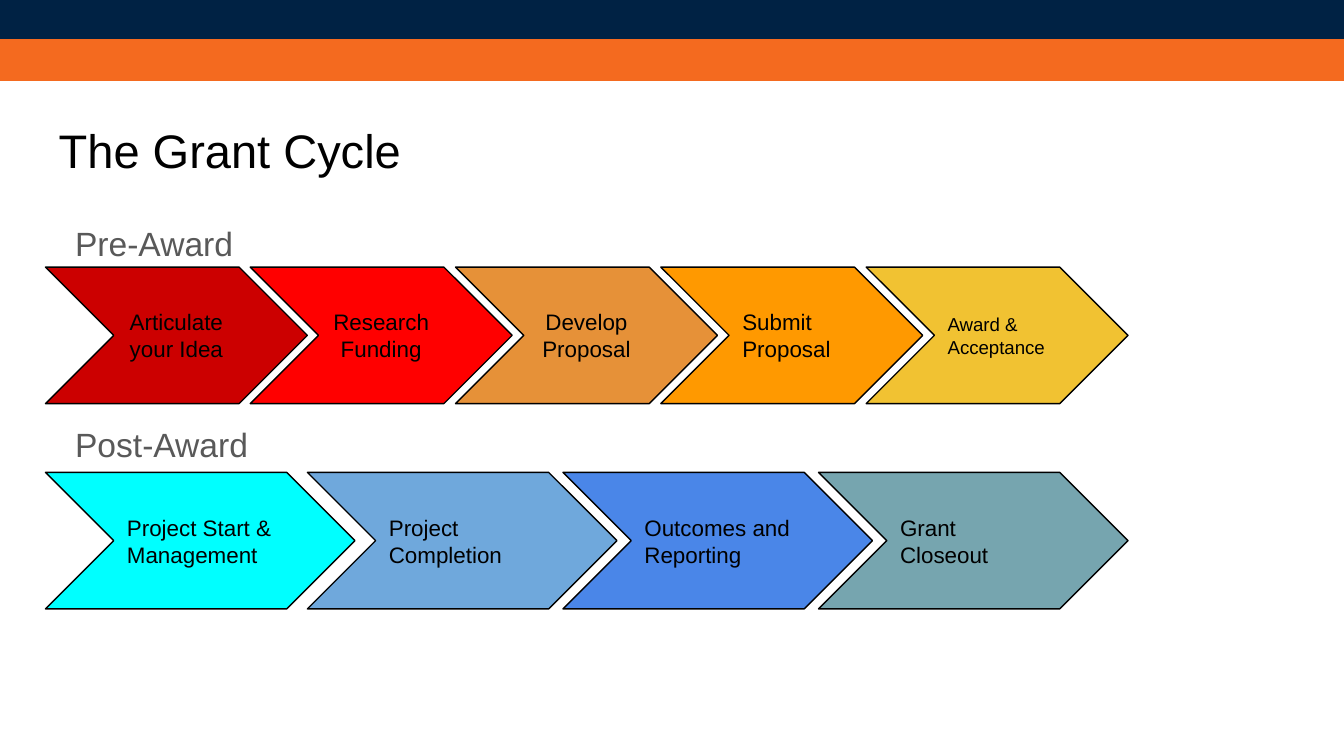
"""Build the grant cycle slide with its pre-award and post-award chevrons."""
from pptx import Presentation
from pptx.dml.color import RGBColor
from pptx.enum import shapes, text
from pptx.util import Cm, Pt

FONT = "Arial"
BLACK = RGBColor(0, 0, 0)
GRAY = RGBColor(0x59, 0x59, 0x59)
NAVY = RGBColor(0x00, 0x22, 0x44)
ORANGE = RGBColor(0xF4, 0x6A, 0x1F)
DARK_RED = RGBColor(0xCC, 0x00, 0x00)
RED = RGBColor(0xFF, 0x00, 0x00)
COPPER = RGBColor(0xE6, 0x91, 0x38)
AMBER = RGBColor(0xFF, 0x99, 0x00)
GOLD = RGBColor(0xF1, 0xC2, 0x32)
CYAN = RGBColor(0x00, 0xFF, 0xFF)
SKY = RGBColor(0x6F, 0xA8, 0xDC)
BLUE = RGBColor(0x4A, 0x86, 0xE8)
TEAL = RGBColor(0x76, 0xA5, 0xAF)
LEFT, CENTER = text.PP_ALIGN.LEFT, text.PP_ALIGN.CENTER

TITLE = "The Grant Cycle"
BANDS = [NAVY, ORANGE]
PHASES = [
    {
        "heading": "Pre-Award", "heading_top": 3.96, "top": 5.05,
        "width": 4.95, "second_left": 4.73, "pitch": 3.88,
        "steps": [
            ("Articulate your Idea", DARK_RED, CENTER, 12),
            ("Research Funding", RED, CENTER, 12),
            ("Develop Proposal", COPPER, CENTER, 12),
            ("Submit Proposal", AMBER, LEFT, 12),
            ("Award & Acceptance", GOLD, LEFT, 10),
        ],
    },
    {
        "heading": "Post-Award", "heading_top": 7.77, "top": 8.93,
        "width": 5.85, "second_left": 5.81, "pitch": 4.83,
        "steps": [
            ("Project Start & Management", CYAN, LEFT, 12),
            ("Project Completion", SKY, LEFT, 12),
            ("Outcomes and Reporting", BLUE, LEFT, 12),
            ("Grant Closeout", TEAL, LEFT, 12),
        ],
    },
]
MARGIN = 0.86
BAND_HEIGHT = 0.79
CHEVRON_HEIGHT = 2.58


def write(shape, words, size, color, align=LEFT, anchor=text.MSO_ANCHOR.TOP):
    frame = shape.text_frame
    frame.word_wrap = True
    frame.vertical_anchor = anchor
    frame.margin_left = frame.margin_right = Cm(0.25)
    frame.margin_top = frame.margin_bottom = Cm(0.25)
    paragraph = frame.paragraphs[0]
    paragraph.text = words
    paragraph.alignment = align
    paragraph.font.name = FONT
    paragraph.font.size = Pt(size)
    paragraph.font.color.rgb = color


def add_label(slide, box, words, size, color):
    write(slide.shapes.add_textbox(*map(Cm, box)), words, size, color)


def add_filled(slide, kind, box, fill):
    shape = slide.shapes.add_shape(kind, *map(Cm, box))
    shape.shadow.inherit = False
    shape.fill.solid()
    shape.fill.fore_color.rgb = fill
    shape.line.fill.background()
    return shape


def add_phase(slide, phase):
    for index, (words, fill, align, size) in enumerate(phase["steps"]):
        left = phase["second_left"] + (index - 1) * phase["pitch"] if index else MARGIN
        box = (left, phase["top"], phase["width"], CHEVRON_HEIGHT)
        chevron = add_filled(slide, shapes.MSO_SHAPE.CHEVRON, box, fill)
        chevron.line.color.rgb = BLACK
        chevron.line.width = Pt(0.75)
        write(chevron, words, size, BLACK, align, text.MSO_ANCHOR.MIDDLE)
    add_label(slide, (1.17, phase["heading_top"], 15.32, 1.27), phase["heading"], 18, GRAY)


def main():
    presentation = Presentation()
    presentation.slide_width, presentation.slide_height = Cm(25.4), Cm(14.29)
    slide = presentation.slides.add_slide(presentation.slide_layouts[6])
    for index, fill in enumerate(BANDS):
        box = (-0.08, -0.05 + index * BAND_HEIGHT, 25.55, BAND_HEIGHT)
        add_filled(slide, shapes.MSO_SHAPE.RECTANGLE, box, fill)
    add_label(slide, (MARGIN, 2.04, 23.67, 1.6), TITLE, 25.2, BLACK)
    for phase in PHASES:
        add_phase(slide, phase)
    presentation.save("out.pptx")


if __name__ == "__main__":
    main()
